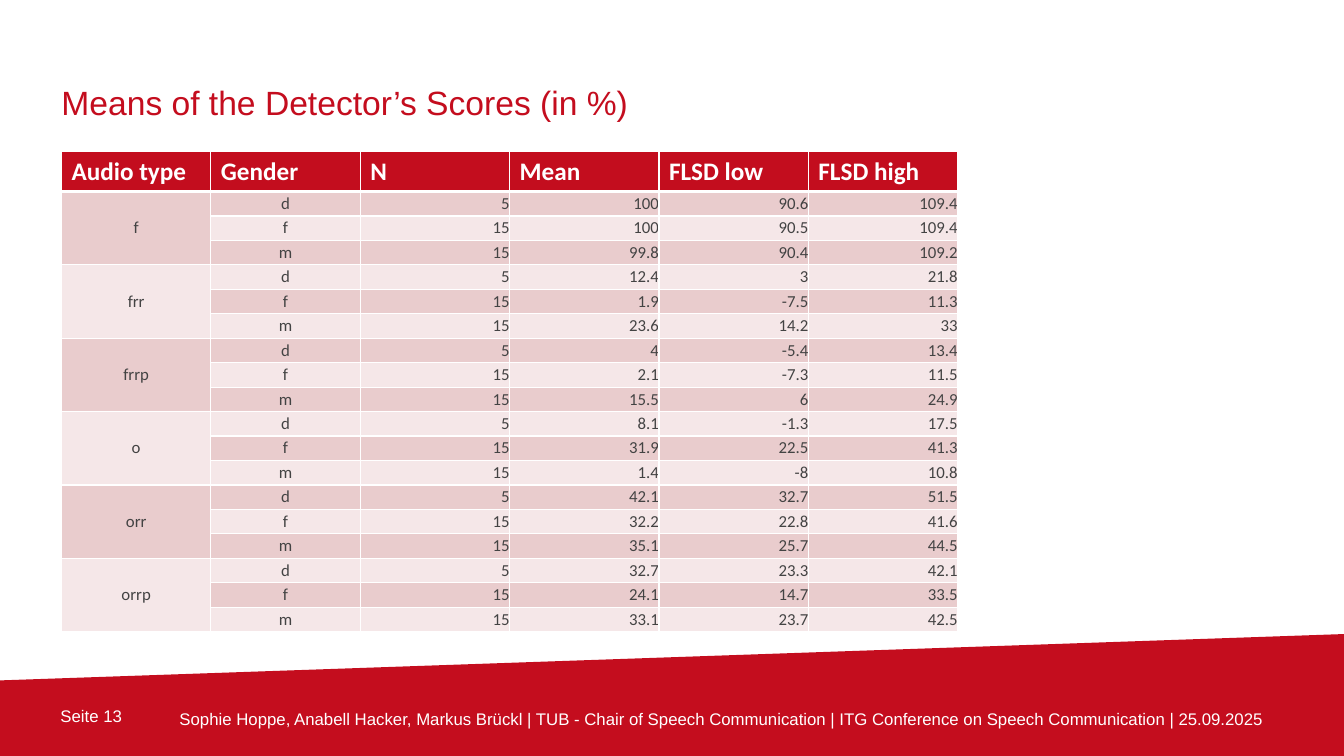
"""Build a slide with a table of mean detection scores by audio type and gender."""
from pptx import Presentation
from pptx.dml.color import RGBColor
from pptx.enum.text import MSO_ANCHOR, PP_ALIGN
from pptx.oxml import parse_xml
from pptx.oxml.ns import nsdecls
from pptx.util import Inches, Pt

COLORS = {"red": "C40D1E", "header": "C30D1E", "dark": "E9CCCD",
          "light": "F5E7E8", "text": "434343", "white": "FFFFFF"}
HEADERS = ["Audio type", "Gender", "N", "Mean", "FLSD low", "FLSD high"]
GENDERS = [("d", "5"), ("f", "15"), ("m", "15")]
SCORES = {
    "f": ["100 90.6 109.4", "100 90.5 109.4", "99.8 90.4 109.2"],
    "frr": ["12.4 3 21.8", "1.9 -7.5 11.3", "23.6 14.2 33"],
    "frrp": ["4 -5.4 13.4", "2.1 -7.3 11.5", "15.5 6 24.9"],
    "o": ["8.1 -1.3 17.5", "31.9 22.5 41.3", "1.4 -8 10.8"],
    "orr": ["42.1 32.7 51.5", "32.2 22.8 41.6", "35.1 25.7 44.5"],
    "orrp": ["32.7 23.3 42.1", "24.1 14.7 33.5", "33.1 23.7 42.5"],
}
TEXTS = [
    ("Seite 13", (0.6, 7, 1.18, 0.21), MSO_ANCHOR.MIDDLE, 12, "white", None),
    ("Sophie Hoppe, Anabell Hacker, Markus Brückl | TUB - Chair of Speech Communication"
     " | ITG Conference on Speech Communication | 25.09.2025",
     (1.78, 6.92, 10.95, 0.29), MSO_ANCHOR.MIDDLE, 12, "white", Pt(24)),
    ("Means of the Detector’s Scores (in %)",
     (0.61, 0.43, 9.09, 0.78), MSO_ANCHOR.BOTTOM, 24, "red", Pt(28)),
]
NO_MARGINS = {f"margin_{side}": 0 for side in ("left", "top", "right", "bottom")}


def write(p, text, font, size, color, bold=False):
    r = p.add_run()
    r.text = text
    for name, value in {"name": font, "size": Pt(size), "bold": bold}.items():
        setattr(r.font, name, value)
    r.font.color.rgb = RGBColor.from_string(COLORS[color])


def style_cell(cell, color, top, bottom):
    for side, width in {"L": 1, "R": 1, "T": top, "B": bottom}.items():
        cell._tc.get_or_add_tcPr().append(parse_xml(
            f'<a:ln{side} {nsdecls("a")} w="{Pt(width)}"><a:solidFill>'
            f'<a:srgbClr val="{COLORS["white"]}"/></a:solidFill></a:ln{side}>'))
    cell.fill.solid()
    cell.fill.fore_color.rgb = RGBColor.from_string(COLORS[color])


prs = Presentation()
prs.slide_width, prs.slide_height = Inches(13.33), Inches(7.5)
s = prs.slides.add_slide(prs.slide_layouts[6])

outline = [(Inches(x), Inches(y)) for x, y in [(0, 6.75), (13.33, 6.29), (13.33, 7.5), (0, 7.5)]]
builder = s.shapes.build_freeform(*outline[0])
builder.add_line_segments(outline[1:], close=True)
band = builder.convert_to_shape()
band.shadow.inherit = False
band.fill.solid()
band.fill.fore_color.rgb = RGBColor.from_string(COLORS["red"])
band.line.fill.background()

for text, box, anchor, size, color, spacing in TEXTS:
    tf = s.shapes.add_textbox(*map(Inches, box)).text_frame
    for name, value in {**NO_MARGINS, "word_wrap": True, "vertical_anchor": anchor}.items():
        setattr(tf, name, value)
    p = tf.paragraphs[0]
    p.line_spacing = spacing
    write(p, text, "Arial", size, color)

rows = [[audio if i == 0 else "", *GENDERS[i], *line.split()]
        for audio, lines in SCORES.items() for i, line in enumerate(lines)]
table = s.shapes.add_table(len(rows) + 1, len(HEADERS), Inches(0.61), Inches(1.5),
                           Inches(8.89), Inches(4.77)).table
for column in table.columns:
    column.width = Inches(8.89 / len(HEADERS))
for row in table.rows:
    row.height = Inches((4.77 - 0.4) / len(rows))
table.rows[0].height = Inches(0.4)

for c, header in enumerate(HEADERS):
    cell = table.cell(0, c)
    style_cell(cell, "header", 1, 3)
    write(cell.text_frame.paragraphs[0], header, "Calibri", 18, "white", True)

for r, values in enumerate(rows, 1):
    for c, value in enumerate(values):
        cell = table.cell(r, c)
        style_cell(cell, "dark" if r % 2 else "light", 3 if r == 1 else 1, 1)
        for name, setting in {**NO_MARGINS, "vertical_anchor": MSO_ANCHOR.MIDDLE}.items():
            setattr(cell, name, setting)
        p = cell.text_frame.paragraphs[0]
        p.alignment = PP_ALIGN.CENTER if c < 2 else PP_ALIGN.RIGHT
        p.font.size = Pt(12)
        if value:
            write(p, value, "Calibri", 12, "text")
for r in range(1, len(rows), len(GENDERS)):
    table.cell(r, 0).merge(table.cell(r + len(GENDERS) - 1, 0))

prs.save("out.pptx")
